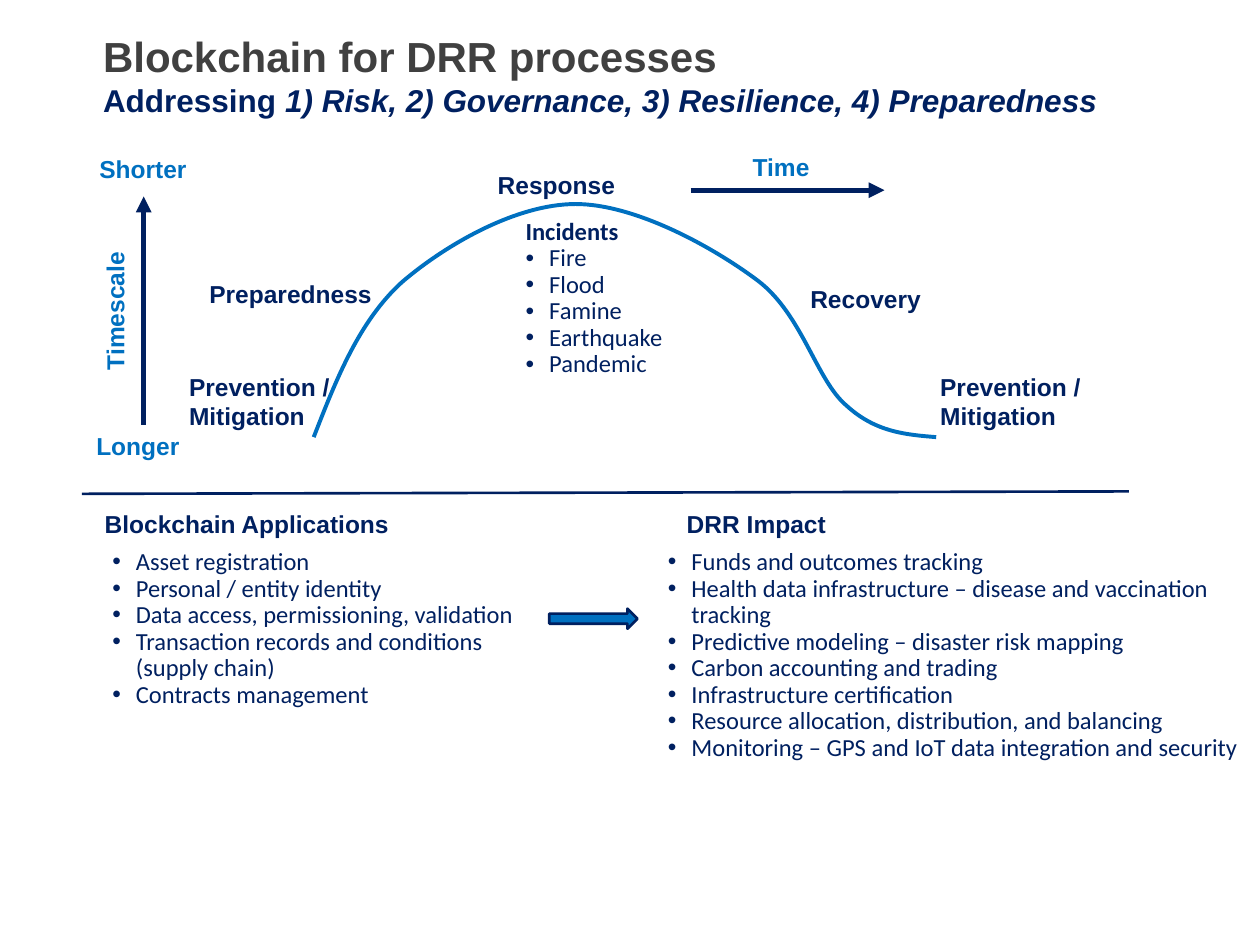
"""Build the slide on blockchain for disaster risk reduction processes."""
from copy import deepcopy

from lxml.etree import SubElement
from pptx import Presentation
from pptx.dml.color import RGBColor
from pptx.enum.shapes import MSO_CONNECTOR as CONNECTOR, MSO_SHAPE as SHAPE
from pptx.enum.text import MSO_ANCHOR as ANCHOR, MSO_AUTO_SIZE as AUTO, PP_ALIGN as ALIGN
from pptx.oxml.ns import qn
from pptx.util import Pt

NAVY, BLUE, GREY = "002060", "0070C0", "404040"
INSET, INDENT = 2.25, 13.5


def color(hex_code):
    return RGBColor.from_string(hex_code)


def add_text(box, lines, hex_code=NAVY, font="Arial", bold=True, **formats):
    """Add a text box; lines that start with a bullet get a hanging indent."""
    frame = slide.shapes.add_textbox(*map(Pt, box)).text_frame
    settings = {"word_wrap": True, "auto_size": AUTO.SHAPE_TO_FIT_TEXT,
                "margin_left": Pt(INSET), "margin_right": Pt(INSET),
                "margin_top": Pt(INSET), "margin_bottom": Pt(INSET),
                "vertical_anchor": formats.get("anchor", ANCHOR.MIDDLE)}
    for name, value in settings.items():
        setattr(frame, name, value)
    for number, line in enumerate(lines):
        paragraph = frame.add_paragraph() if number else frame.paragraphs[0]
        paragraph.alignment = formats.get("align", ALIGN.LEFT)
        paragraph.line_spacing = formats.get("spacing", 1.0)
        bulleted = line.startswith("•")
        if bulleted:
            properties = paragraph._p.get_or_add_pPr()
            properties.set("marL", str(Pt(INDENT)))
            properties.set("indent", str(-Pt(INDENT)))
            SubElement(properties, qn("a:buFont")).set("typeface", "Arial")
            SubElement(properties, qn("a:buChar")).set("char", "•")
        paragraph.text = line.lstrip("•")
        for run in paragraph.runs:
            style = {"name": font, "size": Pt(14), "bold": bold and not bulleted}
            for name, value in style.items():
                setattr(run.font, name, value)
            run.font.color.rgb = color(hex_code)
        for line_break in paragraph._p.findall(qn("a:br")):
            line_break.append(deepcopy(paragraph.runs[0]._r.rPr))
    return frame


deck = Presentation()
deck.slide_width, deck.slide_height = Pt(720), Pt(540)
slide = deck.slides.add_slide(deck.slide_layouts[6])

# curve points: the start, then two controls and an end for each segment
curve_points = [
    (179.3, 249.8),
    (192.2, 216.7), (205.2, 183.6), (229.7, 161.3),
    (254.9, 139.7), (295.2, 116.6), (329, 116.6),
    (362.9, 116.6), (407.5, 141.1), (433.4, 160.6),
    (458.6, 180), (466.6, 217.4), (483.8, 231.8),
    (500.4, 247), (517.7, 248.4), (535, 249.8),
]
start, *rest = [(Pt(x), Pt(y)) for x, y in curve_points]
builder = slide.shapes.build_freeform(*start)
builder.add_line_segments(rest, close=False)
cycle = builder.convert_to_shape()
cycle.shadow.inherit = False
cycle.fill.background()
cycle.line.color.rgb = color(BLUE)
cycle.line.width = Pt(2.25)
outline = cycle._element.find(".//" + qn("a:path"))
segments = outline.findall(qn("a:lnTo"))
for first in range(0, len(segments), 3):
    bezier = SubElement(outline, qn("a:cubicBezTo"))
    for segment in segments[first:first + 3]:
        bezier.append(segment[0])
        outline.remove(segment)

heading = add_text((51.8, 11.5, 611, 56), [""], anchor=ANCHOR.TOP)
heading.margin_left, heading.margin_top = Pt(7.2), Pt(6)
title = heading.paragraphs[0]
for words, size, hex_code, italic in [
    ("Blockchain for DRR processes", 24, GREY, False),
    ("Addressing ", 18, NAVY, False),
    ("1) Risk, 2) Governance, 3) Resilience, 4) Preparedness", 18, NAVY, True),
]:
    run = title.add_run()
    run.text = words
    style = {"name": "Arial", "size": Pt(size), "bold": True, "italic": italic}
    for name, value in style.items():
        setattr(run.font, name, value)
    run.font.color.rgb = color(hex_code)
    if hex_code == GREY:
        title.add_line_break()

for words, left, top, width, height in [
    ("Prevention / \vMitigation", 105.8, 210.3, 112.3, 38),
    ("Preparedness", 117.4, 157.2, 112.3, 21.5),
    ("Response", 282.2, 95, 112.3, 21.5),
    ("Recovery", 460.8, 160, 112.3, 21.5),
    ("Prevention / \vMitigation", 535, 210.3, 112.3, 38),
    ("Blockchain Applications", 57.6, 288.7, 200.9, 21.5),
    ("DRR Impact", 390.2, 288.7, 200.9, 21.5),
]:
    add_text((left, top, width, height), [words])

for words, left, top, width, turn in [
    ("Time", 390.2, 84.4, 112.3, 0),
    ("Timescale", 9.4, 167, 112.3, 270),
    ("Longer", 37.4, 244.2, 82.8, 0),
    ("Shorter", 40.3, 85.5, 82.8, 0),
]:
    add_text((left, top, width, 21.5), [words], BLUE, align=ALIGN.CENTER)
    slide.shapes[-1].rotation = turn

for ends, width, has_head in [
    ((394.6, 108.7, 505.4, 108.7), 3, True),
    ((82.1, 242.6, 82.1, 112.3), 3, True),
    ((46.8, 282.2, 645.1, 280.8), 1.5, False),
]:
    rule = slide.shapes.add_connector(CONNECTOR.STRAIGHT, *map(Pt, ends))
    rule.line.color.rgb = color(NAVY)
    rule.line.width = Pt(width)
    if has_head:
        SubElement(rule.line._get_or_add_ln(), qn("a:tailEnd")).set("type", "triangle")
    SubElement(rule._element.spPr, qn("a:effectLst"))

impact_arrow = slide.shapes.add_shape(SHAPE.RIGHT_ARROW, Pt(313.9), Pt(347.8), Pt(50.4), Pt(11.5))
impact_arrow.shadow.inherit = False
impact_arrow.fill.solid()
impact_arrow.fill.fore_color.rgb = color(BLUE)
impact_arrow.line.color.rgb = color(NAVY)
impact_arrow.line.width = Pt(1.5)

applications = [
    "•Asset registration",
    "•Personal / entity identity",
    "•Data access, permissioning, validation",
    "•Transaction records and conditions (supply chain)",
    "•Contracts management",
]
impacts = [
    "•Funds and outcomes tracking",
    "•Health data infrastructure – disease and vaccination tracking",
    "•Predictive modeling – disaster risk mapping",
    "•Carbon accounting and trading",
    "•Infrastructure certification",
    "•Resource allocation, distribution, and balancing",
    "•Monitoring – GPS and IoT data integration and security",
]
incidents = ["Incidents", "•Fire", "•Flood", "•Famine", "•Earthquake", "•Pandemic"]
for box, items in [
    ((61.9, 311.8, 257.8, 95.8), applications),
    ((379.4, 311.8, 340.6, 126.7), impacts),
    ((298.1, 123.1, 87.8, 95.8), incidents),
]:
    add_text(box, items, font="Calibri", anchor=ANCHOR.TOP, spacing=0.9)

deck.save("out.pptx")
